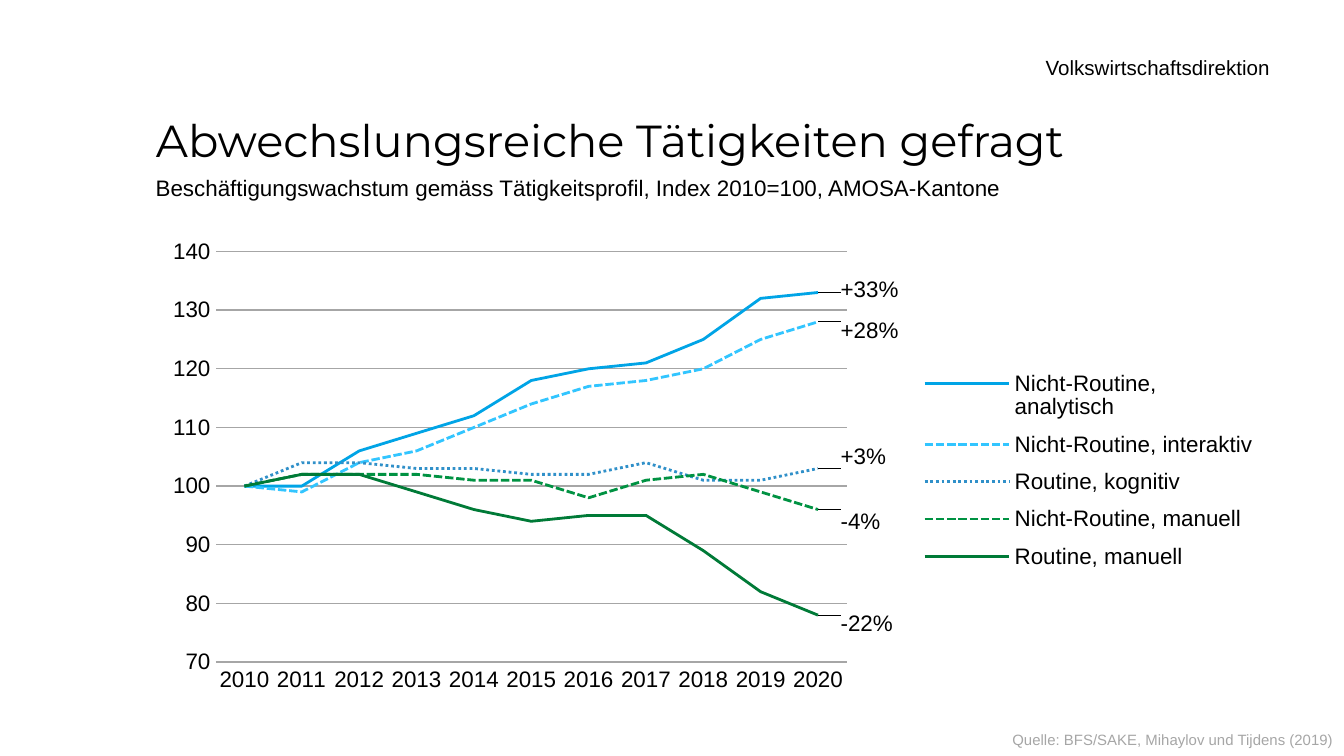
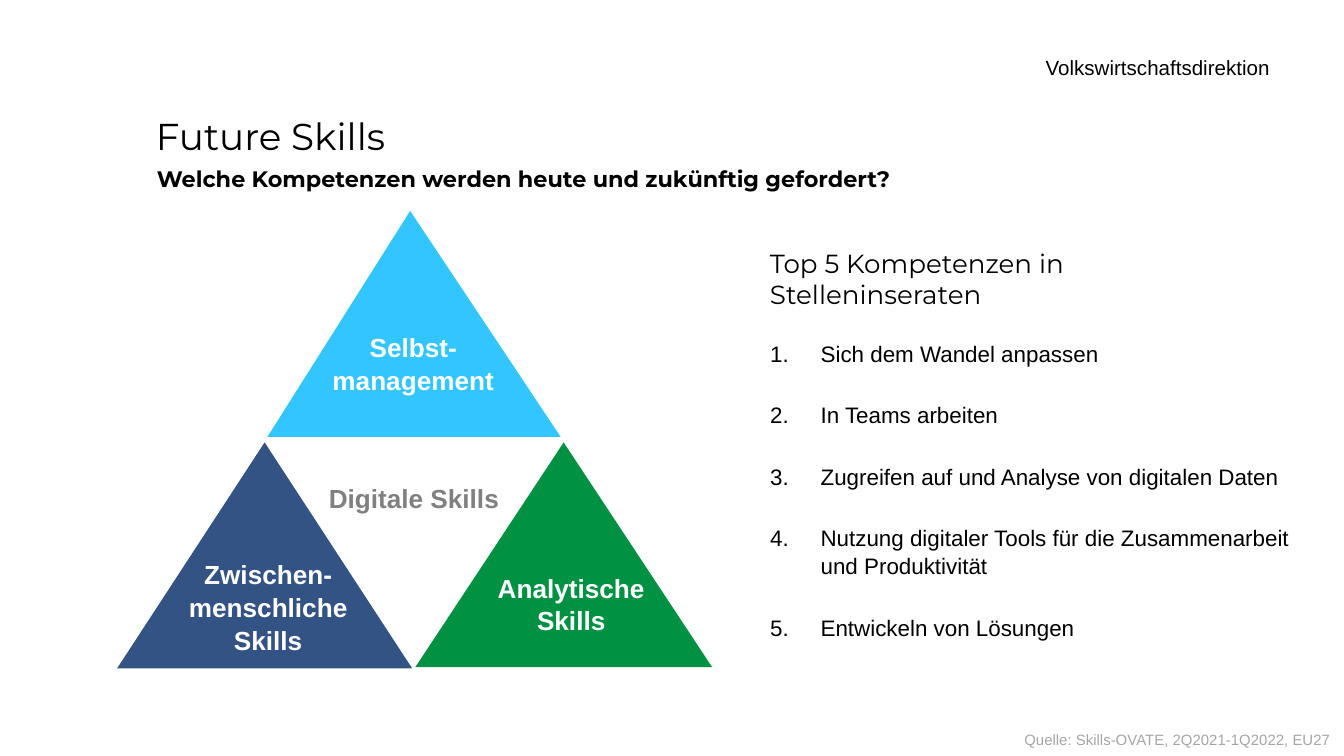
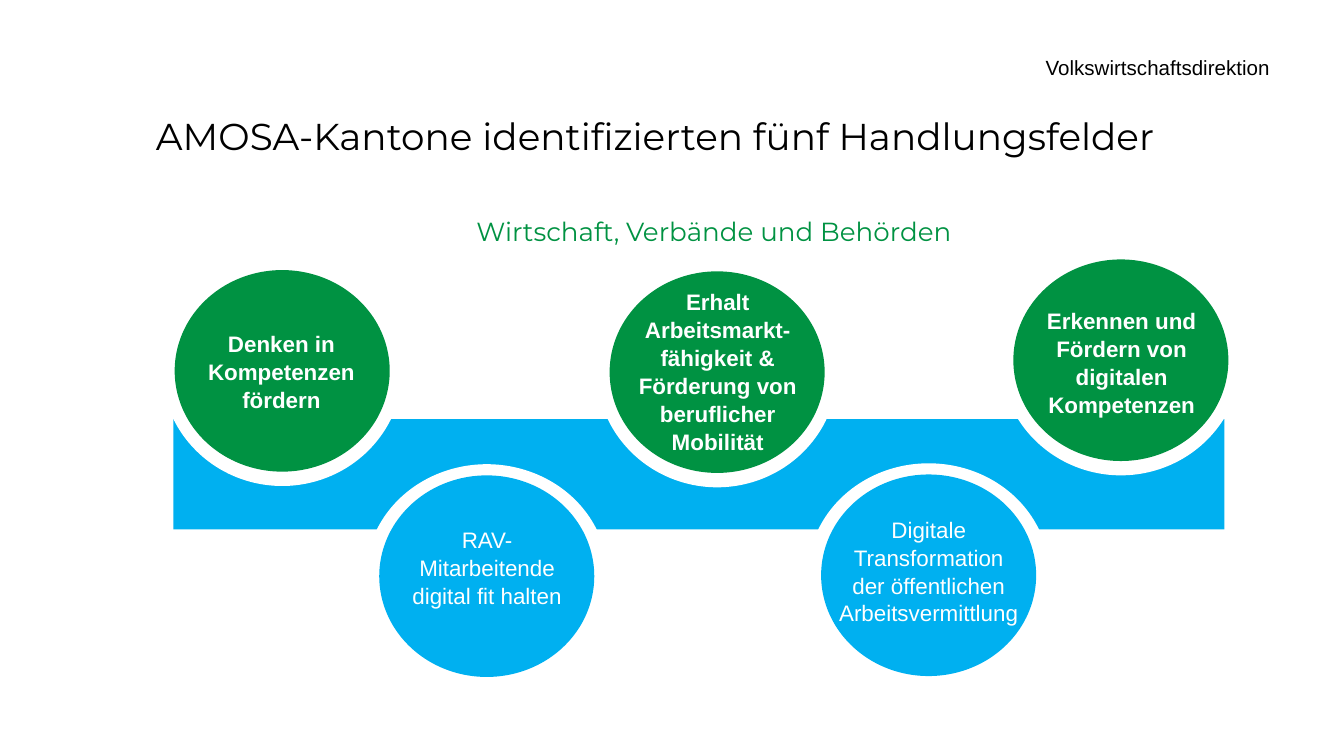
"""Build three slides on future skills and fields of action."""
import lxml.etree
import pptx
import pptx.chart.data
import pptx.dml.color
import pptx.enum.chart
import pptx.enum.dml
import pptx.enum.shapes
import pptx.enum.text
import pptx.oxml
import pptx.oxml.ns
import pptx.util

Pt = pptx.util.Pt
RGB = pptx.dml.color.RGBColor.from_string
qn = pptx.oxml.ns.qn
Align = pptx.enum.text.PP_ALIGN
Shapes = pptx.enum.shapes.MSO_SHAPE
Dash = pptx.enum.dml.MSO_LINE
CHART_NAMESPACE = "http://schemas.openxmlformats.org/drawingml/2006/chart"

COLORS = {
    "black": "000000", "white": "FFFFFF", "gray": "808080", "light gray": "A6A6A6",
    "green": "009242", "dark green": "007A37", "blue": "00A4E6", "light blue": "32C5FF",
    "mid blue": "3090C9", "navy": "335384", "cyan": "00B0F0",
}


def write(shape, box, text, size, color="black", bold=False, font="Arial", align=Align.LEFT):
    shape.left, shape.top, shape.width, shape.height = map(Pt, box)
    frame = shape.text_frame
    frame.text = text
    frame.word_wrap = True
    frame.auto_size = pptx.enum.text.MSO_AUTO_SIZE.NONE
    frame.vertical_anchor = pptx.enum.text.MSO_ANCHOR.TOP
    for paragraph in frame.paragraphs:
        paragraph.alignment = align
        paragraph.space_before = Pt(0)
        paragraph.line_spacing = 1.04 if font == "Arial" else 1.0
        for run in paragraph.runs:
            run.font.name = font
            run.font.size = Pt(size)
            run.font.bold = bold
            run.font.color.rgb = RGB(COLORS[color])


def add_filled(slide, kind, box, color):
    shape = slide.shapes.add_shape(kind, *map(Pt, box))
    shape.shadow.inherit = False
    shape.fill.solid()
    shape.fill.fore_color.rgb = RGB(COLORS[color])
    shape.line.fill.background()
    return shape


presentation = pptx.Presentation()
presentation.slide_width, presentation.slide_height = Pt(720), Pt(405)

titles = [
    ("Abwechslungsreiche Tätigkeiten gefragt", 24, 5),
    ("Future Skills", 20, 1),
    ("AMOSA-Kantone identifizierten fünf Handlungsfelder", 20, 5),
]
for title, size, layout in titles:
    slide = presentation.slides.add_slide(presentation.slide_layouts[layout])
    write(slide.shapes.title, (76.3, 57, 595, 32), title, size, font="Montserrat")
    write(slide.shapes.add_textbox(0, 0, 0, 0), (553, 25.2, 142, 21),
          "Volkswirtschaftsdirektion", 11)
chart_slide, skills_slide, fields_slide = presentation.slides

sources = [
    (chart_slide, "Quelle: BFS/SAKE, Mihaylov und Tijdens (2019)", 721.5),
    (skills_slide, "Quelle: Skills-OVATE, 2Q2021-1Q2022, EU27", 720),
]
for slide, source, right in sources:
    write(slide.shapes.add_textbox(0, 0, 0, 0), (right - 230, 387.5, 230, 17),
          source, 8, "light gray", align=Align.RIGHT)

write(chart_slide.shapes.add_textbox(0, 0, 0, 0), (76.3, 89.3, 595, 21.6),
      "Beschäftigungswachstum gemäss Tätigkeitsprofil, Index 2010=100, AMOSA-Kantone", 12)

series_rows = [
    ("Nicht-Routine, analytisch", (100, 100, 106, 109, 112, 118, 120, 121, 125, 132, 133),
     "blue", Dash.SOLID, "+33%", -0.006),
    ("Nicht-Routine, interaktiv", (100, 99, 104, 106, 110, 114, 117, 118, 120, 125, 128),
     "light blue", Dash.SQUARE_DOT, "+28%", 0.019),
    ("Routine, kognitiv", (100, 104, 104, 103, 103, 102, 102, 104, 101, 101, 103),
     "mid blue", Dash.ROUND_DOT, "+3%", -0.025),
    ("Nicht-Routine, manuell", (100, 102, 102, 102, 101, 101, 98, 101, 102, 99, 96),
     "green", Dash.SQUARE_DOT, "-4%", 0.025),
    ("Routine, manuell", (100, 102, 102, 99, 96, 94, 95, 95, 89, 82, 78),
     "dark green", Dash.SOLID, "-22%", 0.019),
]
chart_data = pptx.chart.data.CategoryChartData()
chart_data.categories = [str(year) for year in range(2010, 2021)]
for name, values, *style in series_rows:
    chart_data.add_series(name, values)
chart = chart_slide.shapes.add_chart(
    pptx.enum.chart.XL_CHART_TYPE.LINE, Pt(60), Pt(123), Pt(618), Pt(255), chart_data).chart
chart.has_title = False
chart.font.name = "Arial"
chart.font.size = Pt(12)
chart.font.color.rgb = RGB(COLORS["black"])
chart.has_legend = True
chart.legend.position = pptx.enum.chart.XL_LEGEND_POSITION.RIGHT
chart.legend.include_in_layout = False
chart.plots[0].vary_by_categories = False

value_axis, category_axis = chart.value_axis, chart.category_axis
value_axis.minimum_scale, value_axis.maximum_scale, value_axis.major_unit = 70, 140, 10
value_axis.format.line.fill.background()
for axis in (value_axis, category_axis):
    axis.major_tick_mark = pptx.enum.chart.XL_TICK_MARK.NONE
for line in (value_axis.major_gridlines.format.line, category_axis.format.line):
    line.color.rgb = RGB(COLORS["light gray"])
    line.width = Pt(0.75)

for series, (name, values, color, dash, label, shift) in zip(chart.plots[0].series, series_rows):
    series.smooth = False
    series.marker.style = pptx.enum.chart.XL_MARKER_STYLE.NONE
    series.format.line.color.rgb = RGB(COLORS[color])
    series.format.line.width = Pt(1.5)
    series.format.line.dash_style = dash
    series.data_labels.show_value = False
    data_label = series.points[10].data_label
    data_label.text_frame.text = label
    data_label.position = pptx.enum.chart.XL_LABEL_POSITION.RIGHT
    font = data_label.text_frame.paragraphs[0].runs[0].font
    font.name, font.size = "Arial", Pt(12)
    font.color.rgb = RGB(COLORS["black"])
    labels = series._element.find(qn("c:dLbls"))
    labels.find(qn("c:dLbl")).insert(1, pptx.oxml.parse_xml(
        f'<c:layout xmlns:c="{CHART_NAMESPACE}"><c:manualLayout>'
        f'<c:x val="0.015"/><c:y val="{shift}"/></c:manualLayout></c:layout>'))
    labels.append(pptx.oxml.parse_xml(
        f'<c:extLst xmlns:c="{CHART_NAMESPACE}">'
        '<c:ext uri="{CE6537A1-D6FC-4f65-9D91-7224C49458BB}" '
        'xmlns:c15="http://schemas.microsoft.com/office/drawing/2012/chart">'
        '<c15:showLeaderLines val="1"/></c:ext></c:extLst>'))

plot_area = chart.plots[0]._element.getparent()
layouts = [
    (plot_area, 0, '<c:layoutTarget val="inner"/>', (0.09, 0.046, 0.547, 0.863)),
    (chart.legend._element, 1, "", (0.705, 0.27, 0.29, 0.47)),
]
for parent, index, target, box in layouts:
    for old_layout in parent.findall(qn("c:layout")):
        parent.remove(old_layout)
    modes = '<c:xMode val="edge"/><c:yMode val="edge"/>'
    sizes = "".join(f'<c:{key} val="{value}"/>' for key, value in zip("xywh", box))
    parent.insert(index, pptx.oxml.parse_xml(
        f'<c:layout xmlns:c="{CHART_NAMESPACE}"><c:manualLayout>'
        f'{target}{modes}{sizes}</c:manualLayout></c:layout>'))

write(skills_slide.shapes.add_textbox(0, 0, 0, 0), (77, 85, 572, 21.6),
      "Welche Kompetenzen werden heute und zukünftig gefordert?", 12, bold=True,
      font="Montserrat")
write(skills_slide.shapes.add_textbox(0, 0, 0, 0), (405.4, 128.9, 244, 41),
      "Top 5 Kompetenzen in Stelleninseraten", 14, font="Montserrat")

competences = [
    "Sich dem Wandel anpassen",
    "In Teams arbeiten",
    "Zugreifen auf und Analyse von digitalen Daten",
    "Nutzung digitaler Tools für die Zusammenarbeit und Produktivität",
    "Entwickeln von Lösungen",
]
competence_list = skills_slide.placeholders[1]
write(competence_list, (405.4, 177.8, 294.5, 167), "\n".join(competences), 12)
for paragraph in competence_list.text_frame.paragraphs:
    paragraph.space_after = Pt(18)
    properties = paragraph._p.get_or_add_pPr()
    properties.set("marL", str(Pt(27)))
    properties.set("indent", str(-Pt(27)))
    lxml.etree.SubElement(properties, qn("a:buFont"), typeface="+mj-lt")
    lxml.etree.SubElement(properties, qn("a:buAutoNum"), type="arabicPeriod")

triangles = [
    ((222.5, 237, 159, 120.4), "green", 0.5),
    ((62.8, 237, 158, 121), "navy", 0.5),
    ((143.3, 113, 157, 121), "light blue", 0.487),
]
for box, color, peak in triangles:
    add_filled(skills_slide, Shapes.ISOSCELES_TRIANGLE, box, color).adjustments[0] = peak

skills = [
    ("Digitale Skills", (167.8, 254.2, 108, 24.5), "gray"),
    ("Analytische\nSkills", (239.8, 302.4, 132.5, 41), "white"),
    ("Selbst-management", (151.2, 173.5, 140.4, 41), "white"),
    ("Zwischen-menschliche Skills", (74.2, 295.2, 139, 58.3), "white"),
]
for skill, box, color in skills:
    write(skills_slide.shapes.add_textbox(0, 0, 0, 0), box, skill, 14, color, True,
          align=Align.CENTER)

write(fields_slide.shapes.add_textbox(0, 0, 0, 0), (190, 111.6, 385.2, 24.5),
      "Wirtschaft, Verbände und Behörden", 14, "green", font="Montserrat", align=Align.CENTER)
add_filled(fields_slide, Shapes.RECTANGLE, (92.9, 224.6, 563, 59), "cyan")

fields = [
    ("Denken in Kompetenzen fördern", 93.6, 144.7, "green", (98.6, 172.8, 104.4, 51)),
    ("Erhalt Arbeitsmarkt-fähigkeit & Förderung von beruflicher Mobilität",
     326.6, 145.4, "green", (327.6, 150.5, 113.8, 94.3)),
    ("Erkennen und Fördern von digitalen Kompetenzen",
     542.9, 139, "green", (549.4, 160.6, 103, 64.8)),
    ("RAV-Mitarbeitende digital fit halten", 203.2, 254.7, "cyan", (211.7, 277.9, 98.6, 51)),
    ("Digitale Transformation der öffentlichen Arbeitsvermittlung",
     439.9, 254.2, "cyan", (441.4, 272.2, 112.3, 65.5)),
]
for field, left, top, color, text_box in fields:
    is_upper = color == "green"
    rise, ring_height = (11.7, 127.4) if is_upper else (6, 120)
    add_filled(fields_slide, Shapes.OVAL, (left - 7.2, top - rise, 129.6, ring_height), "white")
    add_filled(fields_slide, Shapes.OVAL, (left, top, 115.2, 108), color)
    write(fields_slide.shapes.add_textbox(0, 0, 0, 0), text_box, field, 12, "white", is_upper,
          align=Align.CENTER)

presentation.save("out.pptx")
